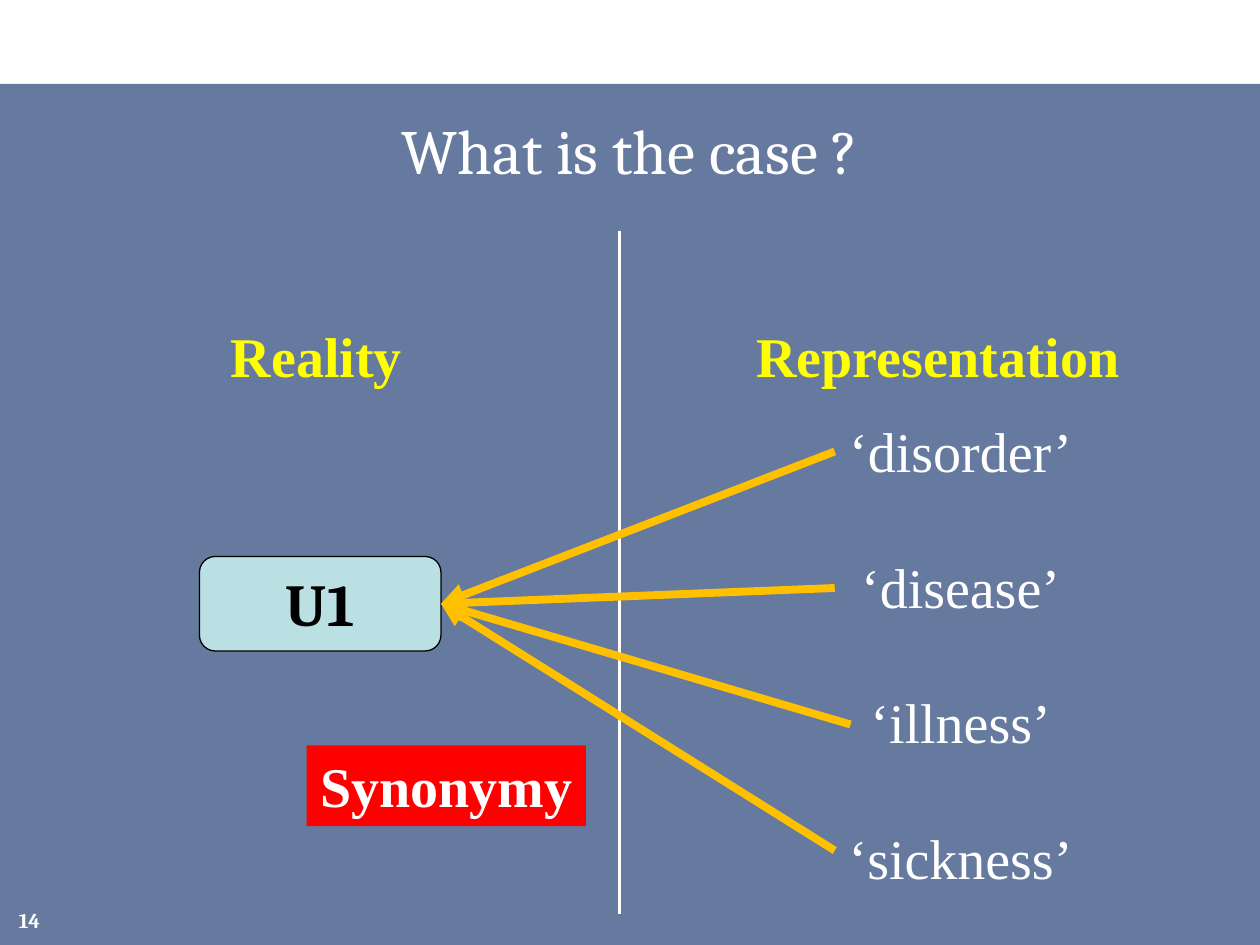
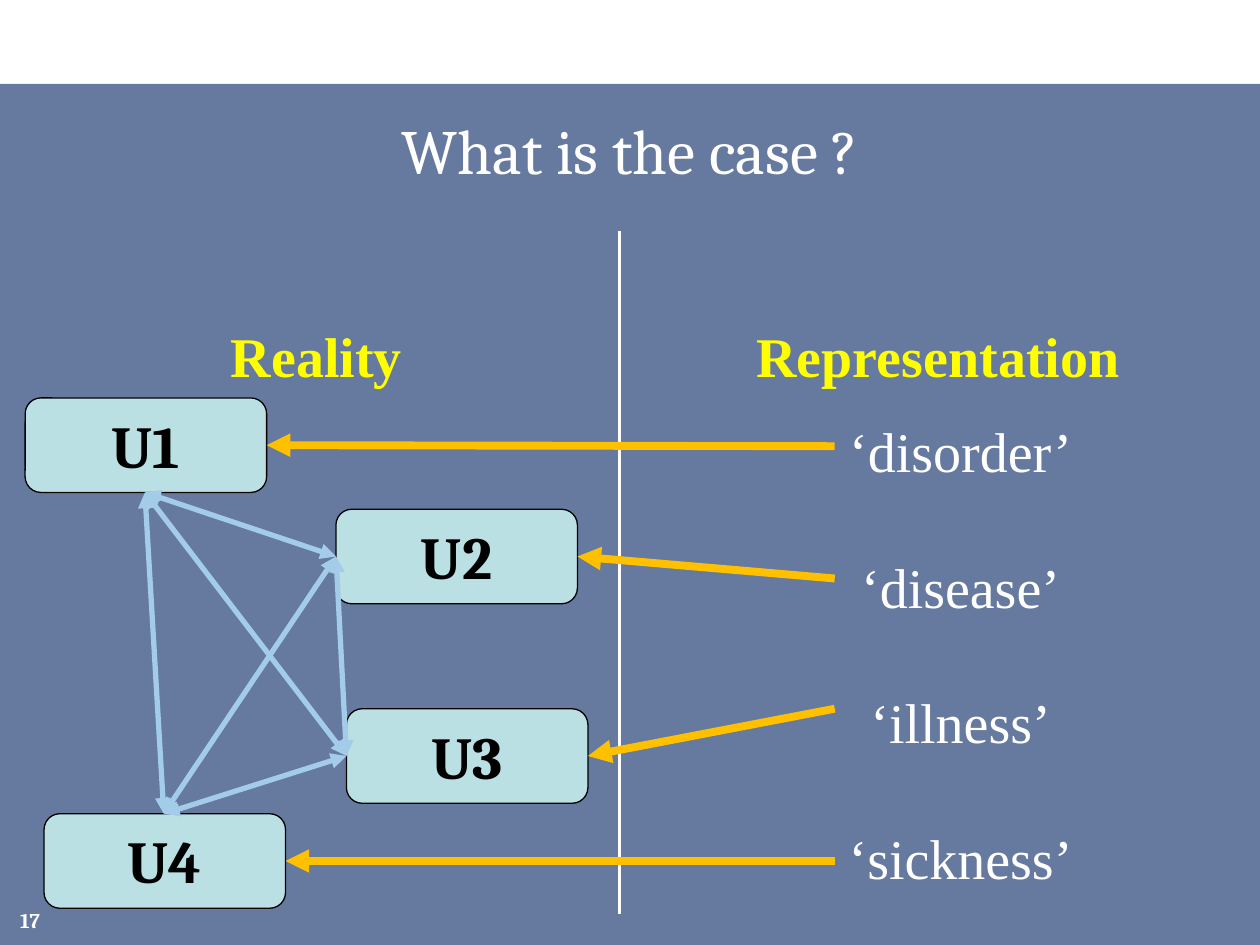
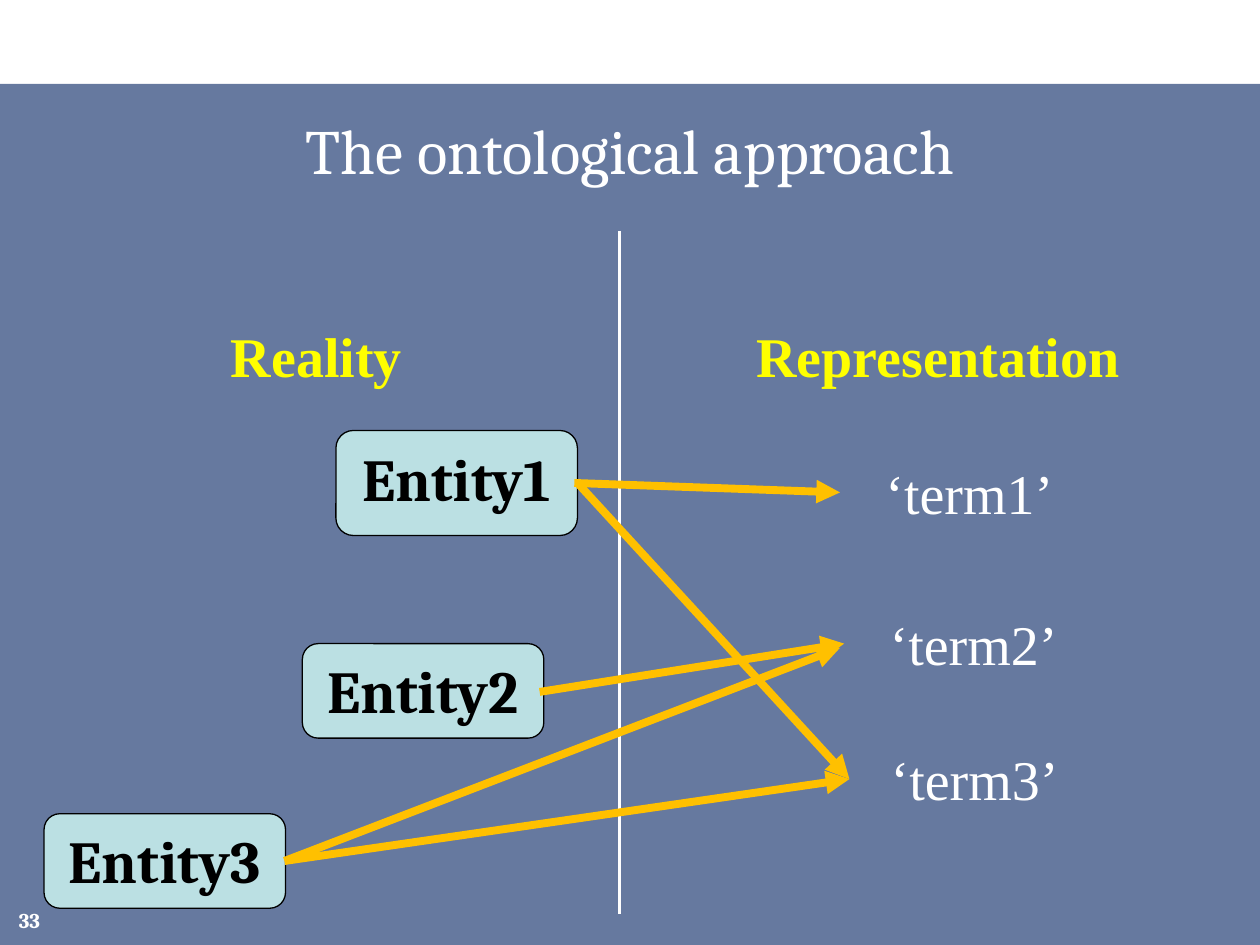
import itertools

import lxml.etree
import pptx
import pptx.dml.color
import pptx.enum.shapes
import pptx.enum.text
import pptx.oxml.ns
import pptx.util

RGB = pptx.dml.color.RGBColor.from_string
SHAPE = pptx.enum.shapes.MSO_SHAPE
ALIGN = pptx.enum.text.PP_ALIGN
ANCHOR = pptx.enum.text.MSO_ANCHOR
Pt = pptx.util.Pt
qn = pptx.oxml.ns.qn

# Theme: colours, type and line styles
SERIF, TIMES = "Cambria", "Times New Roman"
THEME = {
    "band": "002060", "band_alpha": 60, "box": "BBE0E3", "box_line": "000000", "tag": "FF0000",
    "title": {"name": SERIF, "size": Pt(36), "bold": False, "color": "FFFFFF"},
    "number": {"name": SERIF, "size": Pt(12), "bold": True, "color": "FFFFFF"},
    "heading": {"name": TIMES, "size": Pt(32), "bold": True, "color": "FFFF00"},
    "term": {"name": TIMES, "size": Pt(32), "bold": False, "color": "FFFFFF"},
    "tag_text": {"name": TIMES, "size": Pt(32), "bold": True, "color": "FFFFFF"},
    "entity": {"name": SERIF, "size": Pt(34), "bold": True, "color": "000000"},
    "divider": {"color": "FFFFFF", "width": 2.25, "ends": ()},
    "refers": {"color": "FFC000", "width": 4.5, "ends": ("tailEnd",)},
    "related": {"color": "A2CCE8", "width": 3, "ends": ("headEnd", "tailEnd")},
}

# Grid: 120 columns by 90 rows
prs = pptx.Presentation()
prs.slide_width, prs.slide_height = pptx.util.Inches(10), pptx.util.Inches(7.5)
COL, ROW = prs.slide_width / 120, prs.slide_height / 90
BOX_W, BOX_H, LABEL_H = 23, 9, 7.7
TERM_X = 79.5


def add_block(s, at, lines=(), style=None, fill=None, outline=None, preset=SHAPE.RECTANGLE,
              gap=0, align=ALIGN.CENTER, **frame):
    """Add a text block in grid units; with a fill it becomes a shape."""
    x, y, w, h = at
    place = [int(v) for v in (x * COL, y * ROW, w * COL, h * ROW)]
    if fill:
        sp = s.shapes.add_shape(preset, *place)
        sp.shadow.inherit = False
        sp.fill.solid()
        sp.fill.fore_color.rgb = RGB(fill)
        if outline:
            sp.line.color.rgb = RGB(outline)
            sp.line.width = Pt(0.75)
        else:
            sp.line.fill.background()
    else:
        sp = s.shapes.add_textbox(*place)
    tf = sp.text_frame
    for name, value in {"word_wrap": True, "vertical_anchor": ANCHOR.TOP, **frame}.items():
        setattr(tf, name, value)
    for i, line in enumerate(lines):
        p = tf.add_paragraph() if i else tf.paragraphs[0]
        p.alignment = align
        if i:
            p.space_before = Pt(gap)
        r = p.add_run()
        r.text = line
        for name in ("name", "size", "bold"):
            setattr(r.font, name, style[name])
        r.font.color.rgb = RGB(style["color"])
    return sp


def add_line(s, start, end, style):
    """Add a straight line in grid units, with the arrowheads of its style."""
    ends = [int(v) for x, y in (start, end) for v in (x * COL, y * ROW)]
    sp = s.shapes.add_connector(pptx.enum.shapes.MSO_CONNECTOR.STRAIGHT, *ends)
    sp.line.color.rgb = RGB(style["color"])
    sp.line.width = Pt(style["width"])
    for tag in style["ends"]:
        lxml.etree.SubElement(sp.line._get_or_add_ln(), qn("a:" + tag), type="triangle")
    lxml.etree.SubElement(sp._element.spPr, qn("a:effectLst"))


# Shared frame: band, title, number, divider and column headings
slides = []
for title, number in (("What is the case ?", "14"), ("What is the case ?", "17"),
                      ("The ontological approach", "33")):
    s = prs.slides.add_slide(prs.slide_layouts[6])
    band = add_block(s, (0, 8, 120, 82), fill=THEME["band"])
    color = band._element.spPr.find(qn("a:solidFill"))[0]
    lxml.etree.SubElement(color, qn("a:alpha"), val=str(THEME["band_alpha"] * 1000))
    add_block(s, (3, 10, 114, 10), [title], THEME["title"])
    add_block(s, (0, 85.2, 5, 4.8), [number], THEME["number"], align=ALIGN.RIGHT,
              vertical_anchor=ANCHOR.MIDDLE)
    add_line(s, (59, 22), (59, 87), THEME["divider"])
    for heading, x, w in (("Reality", 20.7, 18.9), ("Representation", 70.7, 37.3)):
        add_block(s, (x, 30, w, LABEL_H), [heading], THEME["heading"], word_wrap=False)
    slides.append(s)
synonymy, distinct, ontological = slides

# Words shared by the first two slides
for s in (synonymy, distinct):
    add_block(s, (TERM_X, 39.1, 24, 46.4), ["‘disorder’", "‘disease’", "‘illness’", "‘sickness’"],
              THEME["term"], gap=39, word_wrap=False)

# Entity boxes: label, column, row, height
entities = (
    (synonymy, (("U1", 19, 53, BOX_H),)),
    (distinct, (("U1", 2.4, 37.9, BOX_H), ("U2", 32, 48.5, BOX_H),
                ("U3", 33, 67.5, BOX_H), ("U4", 4.2, 77.5, BOX_H))),
    (ontological, (("Entity1", 32, 41, 10), ("Entity2", 28.8, 61.3, BOX_H),
                   ("Entity3", 4.2, 77.5, BOX_H))),
)
for s, boxes in entities:
    for label, x, y, h in boxes:
        add_block(s, (x, y, BOX_W, h), [label], THEME["entity"], THEME["box"],
                  THEME["box_line"], SHAPE.ROUNDED_RECTANGLE)

# Synonymy: four words refer to one entity
for start in ((TERM_X, 43), (TERM_X, 56), (81, 69), (TERM_X, 81)):
    add_line(synonymy, start, (42, 57.5), THEME["refers"])
add_block(synonymy, (29.2, 71, 26.6, LABEL_H), ["Synonymy"], THEME["tag_text"], THEME["tag"],
          word_wrap=False)

# Distinct entities: one word each, and every pair of entities related
for (label, x, y, h), word_y in zip(entities[1][1], (42.5, 55.1, 67.5, 82)):
    add_line(distinct, (TERM_X, word_y), (x + BOX_W, y + h / 2), THEME["refers"])
joints = ((13.8, 46.9), (32, 53), (33, 72), (15.6, 77.5))
for start, end in itertools.combinations(joints, 2):
    add_line(distinct, start, end, THEME["related"])

# Ontological approach: entities point to terms
for term, x, y in (("‘term1’", 80.4, 43.1), ("‘term2’", 80.8, 57.5), ("‘term3’", 80.9, 70.3)):
    add_block(ontological, (x, y, 21.2, LABEL_H), [term], THEME["term"], word_wrap=False,
              margin_left=pptx.util.Inches(0.32))
for start, end in (((54.7, 46), (80, 46.9)), ((51.4, 65.9), (80.4, 61.3)),
                   ((27.1, 82), (80.9, 74.2)), ((55, 46), (80.9, 74.2)),
                   ((27.1, 82), (80, 61.7))):
    add_line(ontological, start, end, THEME["refers"])

prs.save("out.pptx")
